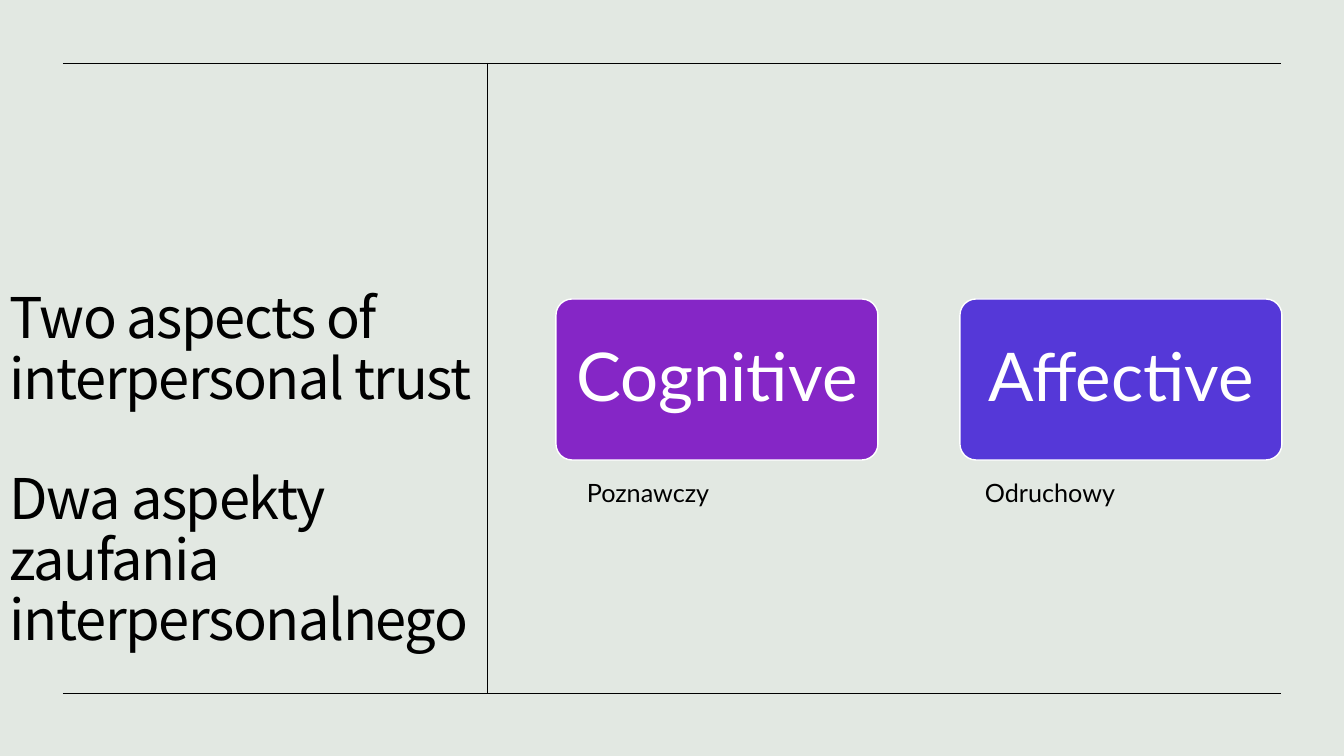
from lxml import etree
from pptx import Presentation
from pptx.dml.color import RGBColor
from pptx.enum import shapes, text
from pptx.oxml import ns
from pptx.util import Pt

SCALE = 914400 / 100.8


def px(n):
    return round(n * SCALE)


def rgb(code):
    return RGBColor.from_string(code)


class Deck:
    font = "Lato"
    head = "Noto Sans CJK KR"
    ink = "000000"
    paper = "E2E8E2"
    white = "FFFFFF"

    def __init__(self):
        self.prs = Presentation()
        self.prs.slide_width, self.prs.slide_height = px(1344), px(756)
        self.slide = self.prs.slides.add_slide(self.prs.slide_layouts[6])
        fill = self.slide.background.fill
        fill.solid()
        fill.fore_color.rgb = rgb(self.paper)

    def style(self, para, size, color, font):
        for run in para.runs:
            run.font.size = Pt(size)
            run.font.name = font
            run.font.color.rgb = rgb(color)

    def title(self, x, y, w, h, lines):
        box = self.slide.shapes.add_textbox(px(x), px(y), px(w), px(h))
        frame = box.text_frame
        frame.word_wrap = True
        frame.vertical_anchor = text.MSO_ANCHOR.BOTTOM
        frame.text = "\n".join(lines)
        for para in frame.paragraphs:
            para.line_spacing = 0.9
            self.style(para, 40, self.ink, self.head)
            for run in para.runs:
                run.font._element.set("spc", "-100")
        for para in frame.paragraphs[1:]:
            para.space_before = Pt(43)

    def rule(self, x1, y1, x2, y2):
        line = self.slide.shapes.add_connector(
            shapes.MSO_CONNECTOR.STRAIGHT, px(x1), px(y1), px(x2), px(y2))
        line.line.color.rgb = rgb(self.ink)
        line.line.width = Pt(0.5)
        etree.SubElement(line._element.spPr, ns.qn("a:effectLst"))

    def card(self, x, y, w, h, label, color):
        card = self.slide.shapes.add_shape(
            shapes.MSO_SHAPE.ROUNDED_RECTANGLE, px(x), px(y), px(w), px(h))
        card.adjustments[0] = 0.1
        card.shadow.inherit = False
        card.fill.solid()
        card.fill.fore_color.rgb = rgb(color)
        card.line.color.rgb = rgb(self.white)
        card.line.width = Pt(1)
        frame = card.text_frame
        frame.word_wrap = True
        frame.vertical_anchor = text.MSO_ANCHOR.MIDDLE
        frame.text = label
        para = frame.paragraphs[0]
        para.alignment = text.PP_ALIGN.CENTER
        para.line_spacing = 0.9
        self.style(para, 48, self.white, self.font)

    def note(self, x, y, w, h, label):
        box = self.slide.shapes.add_textbox(px(x), px(y), px(w), px(h))
        box.text_frame.word_wrap = True
        box.text_frame.text = label
        self.style(box.text_frame.paragraphs[0], 18, self.ink, self.font)


def main():
    deck = Deck()
    deck.title(0, 100, 487, 558, [
        "Two aspects of interpersonal trust",
        "Dwa aspekty zaufania interpersonalnego"])
    top, base = 63, 693
    for y in (top, base):
        deck.rule(63, y, 1281, y)
    deck.rule(487, top, 487, base)
    for x, label, color, left, polish in (
            (556, "Cognitive", "8526C6", 577, "Poznawczy"),
            (960, "Affective", "5538D8", 975, "Odruchowy")):
        deck.card(x, 299, 322, 161, label, color)
        deck.note(left, 472, 294, 40, polish)
    deck.prs.save("out.pptx")


if __name__ == "__main__":
    main()
